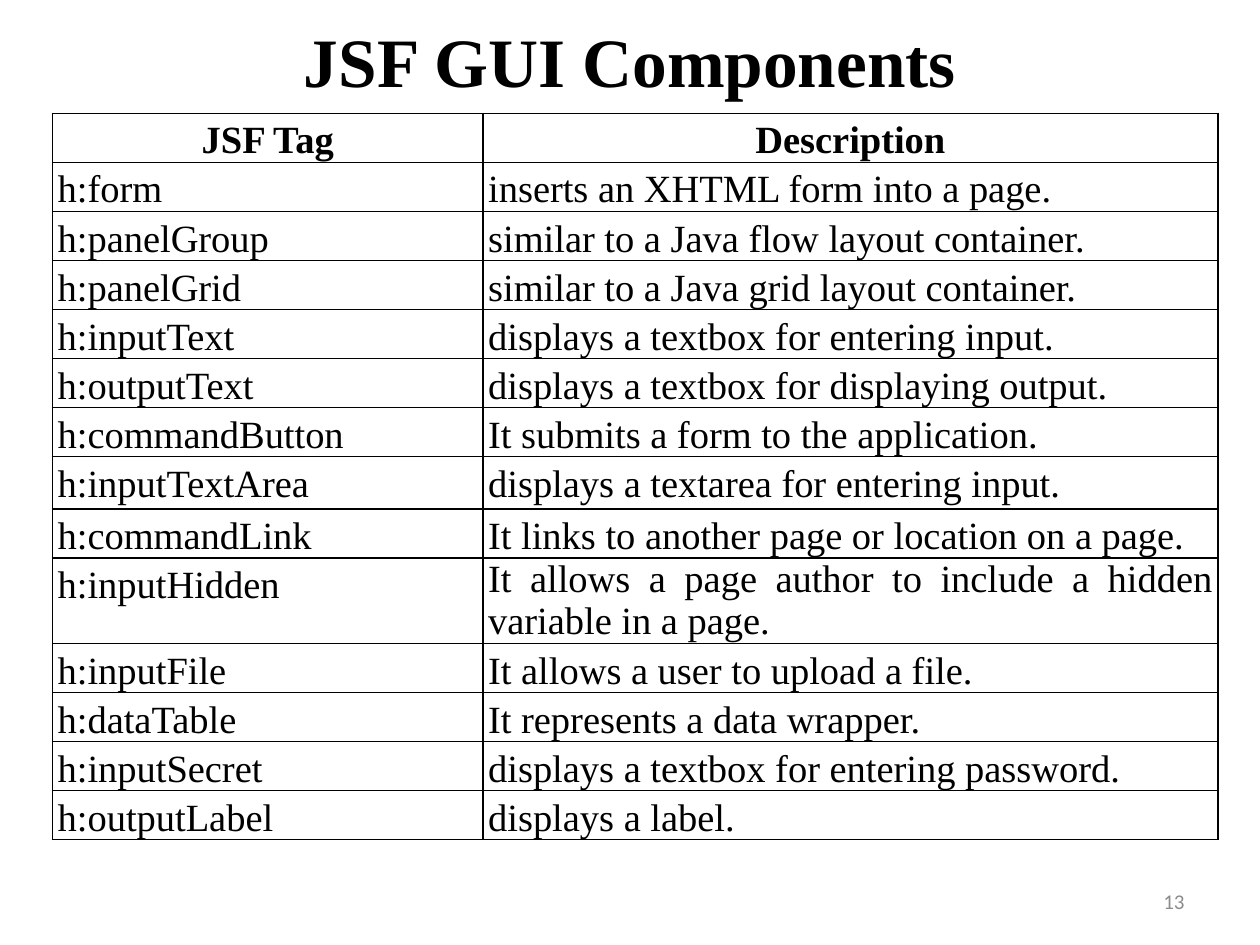
from lxml import etree
from pptx import Presentation
from pptx.dml.color import RGBColor
from pptx.enum.text import MSO_ANCHOR, MSO_AUTO_SIZE, PP_ALIGN
from pptx.oxml.ns import qn
from pptx.util import Pt

MID, TOP = MSO_ANCHOR.MIDDLE, MSO_ANCHOR.TOP
FIXED = MSO_AUTO_SIZE.NONE
LEFT, RIGHT = PP_ALIGN.LEFT, PP_ALIGN.RIGHT
CENTER, EVEN = PP_ALIGN.CENTER, PP_ALIGN.JUSTIFY
BLACK = RGBColor(0x00, 0x00, 0x00)
GRAY = RGBColor(0x8C, 0x8C, 0x8C)
SERIF = "Times New Roman"

TITLE = "JSF GUI Components"
NUMBER = "13"
ROWS = [
    ("JSF Tag", "Description"),
    ("h:form", "inserts an XHTML form into a page."),
    ("h:panelGroup", "similar to a Java flow layout container."),
    ("h:panelGrid", "similar to a Java grid layout container."),
    ("h:inputText", "displays a textbox for entering input."),
    ("h:outputText", "displays a textbox for displaying output."),
    ("h:commandButton", "It submits a form to the application."),
    ("h:inputTextArea", "displays a textarea for entering input."),
    ("h:commandLink", "It links to another page or location on a page."),
    ("h:inputHidden",
     "It allows a page author to include a hidden variable in a page."),
    ("h:inputFile", "It allows a user to upload a file."),
    ("h:dataTable", "It represents a data wrapper."),
    ("h:inputSecret", "displays a textbox for entering password."),
    ("h:outputLabel", "displays a label."),
]
WIDTHS = [246, 420]
ROW_H = 28
TALL = {"h:inputTextArea": 30, "h:inputHidden": 49}
LOOSE = {"h:commandLink", "h:inputHidden", "h:inputFile"}
PAD = 3

HEAD = {"name": SERIF, "size": Pt(39.6), "bold": True}
CELL = {"name": SERIF, "size": Pt(22), "bold": False}
FOOT = {"name": "Calibri", "size": Pt(12), "bold": False}


def apply(item, values):
    for key, value in values.items():
        setattr(item, key, value)


def write(frame, text, look, color, align):
    para = frame.paragraphs[0]
    para.alignment = align
    run = para.add_run()
    run.text = text
    apply(run.font, look)
    run.font.color.rgb = color
    return para


def border(cell):
    props = cell._tc.get_or_add_tcPr()
    for spot, side in enumerate(("lnL", "lnR", "lnT", "lnB")):
        line = etree.Element(qn("a:" + side), w=str(Pt(1)))
        fill = etree.SubElement(line, qn("a:solidFill"))
        etree.SubElement(fill, qn("a:srgbClr"), val=str(BLACK))
        props.insert(spot, line)


def place(shape, left, top, width, height):
    apply(shape, {"left": Pt(left), "top": Pt(top),
                  "width": Pt(width), "height": Pt(height)})


deck = Presentation()
apply(deck, {"slide_width": Pt(720), "slide_height": Pt(540)})
slide = deck.slides.add_slide(deck.slide_layouts[5])

title = slide.shapes.title
place(title, 36, 18, 648, 32.4)
apply(title.text_frame, {"auto_size": FIXED, "word_wrap": True,
                         "vertical_anchor": MID})
write(title.text_frame, TITLE, HEAD, BLACK, CENTER)

tall = [TALL.get(tag, ROW_H) for tag, _ in ROWS]
table = slide.shapes.add_table(
    len(ROWS), len(WIDTHS), Pt(30), Pt(64.8),
    Pt(sum(WIDTHS)), Pt(sum(tall))).table
apply(table, {"first_row": False, "horz_banding": False})
for col, width in zip(table.columns, WIDTHS):
    col.width = Pt(width)
for r, pair in enumerate(ROWS):
    table.rows[r].height = Pt(tall[r])
    for c, text in enumerate(pair):
        cell = table.cell(r, c)
        apply(cell, {"margin_left": Pt(PAD), "margin_right": Pt(PAD),
                     "margin_top": 0, "margin_bottom": 0,
                     "vertical_anchor": TOP})
        cell.fill.background()
        border(cell)
        align = CENTER if r == 0 else LEFT if text in LOOSE else EVEN
        para = write(cell.text_frame, text, {**CELL, "bold": r == 0},
                     BLACK, align)
        wraps = c == 1 and pair[0] == "h:inputHidden"
        para.line_spacing = 1.0 if wraps else 1.15

foot = slide.shapes.add_textbox(Pt(516), Pt(500.5), Pt(168), Pt(28.8))
apply(foot.text_frame, {"word_wrap": True, "vertical_anchor": MID})
write(foot.text_frame, NUMBER, FOOT, GRAY, RIGHT)

deck.save("out.pptx")
